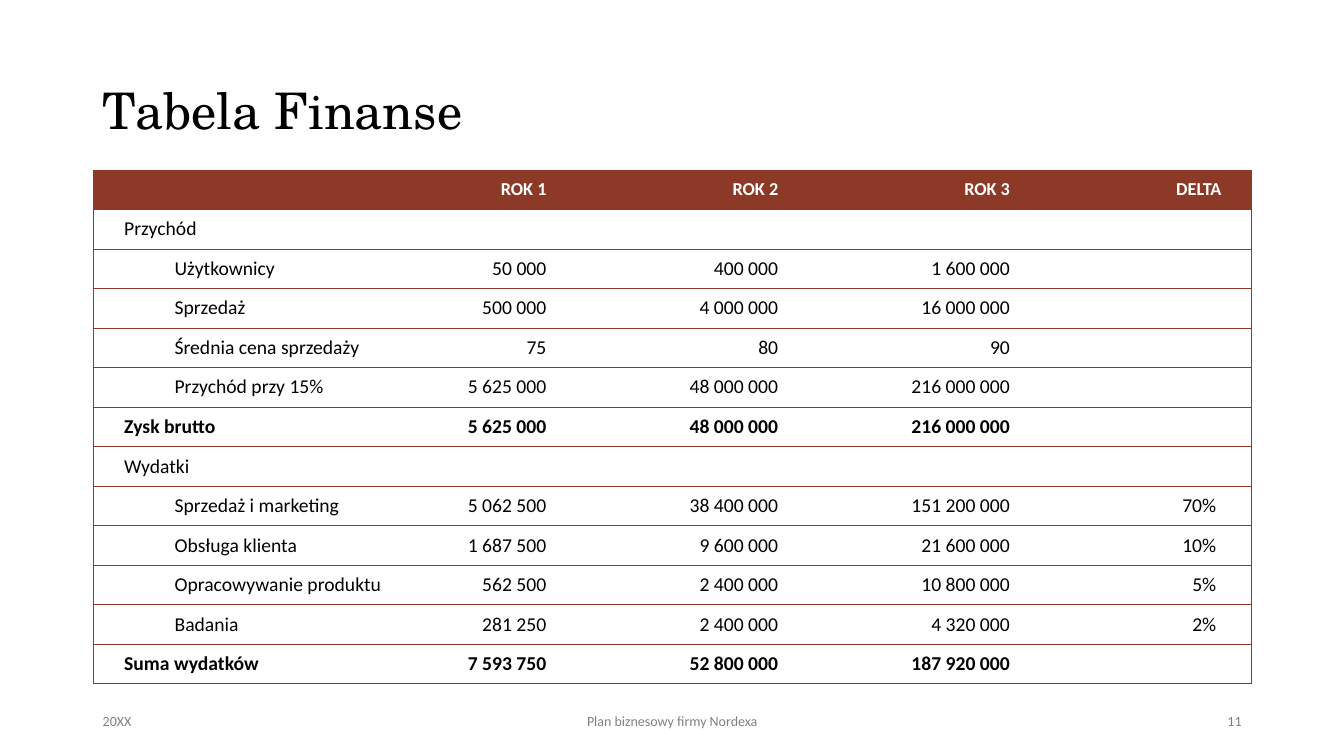
from dataclasses import dataclass

from lxml.etree import SubElement as Sub
from pptx import Presentation
from pptx.dml.color import RGBColor as Rgb
from pptx.enum.text import MSO_ANCHOR as Anchor, MSO_AUTO_SIZE as Auto, PP_ALIGN as Align
from pptx.oxml.ns import qn
from pptx.util import Cm, Pt


@dataclass(frozen=True)
class Theme:
    rust: str = "8C3A27"
    white: str = "FFFFFF"
    black: str = "000000"
    gray: str = "808080"
    serif: str = "TeX Gyre Schola"
    sans: str = "Calibri"
    title: int = 36
    head: int = 13
    body: int = 14
    foot: int = 10
    rule: float = 0.5


LOOK = Theme()
HEADS = ["", "ROK 1", "ROK 2", "ROK 3", "DELTA"]
GROUP, ITEM, TOTAL = range(3)
ROWS = [
    (GROUP, "Przychód", [], ""),
    (ITEM, "Użytkownicy", [50000, 400000, 1600000], ""),
    (ITEM, "Sprzedaż", [500000, 4000000, 16000000], ""),
    (ITEM, "Średnia cena sprzedaży", [75, 80, 90], ""),
    (ITEM, "Przychód przy 15%", [5625000, 48000000, 216000000], ""),
    (TOTAL, "Zysk brutto", [5625000, 48000000, 216000000], ""),
    (GROUP, "Wydatki", [], ""),
    (ITEM, "Sprzedaż i marketing", [5062500, 38400000, 151200000], "70%"),
    (ITEM, "Obsługa klienta", [1687500, 9600000, 21600000], "10%"),
    (ITEM, "Opracowywanie produktu", [562500, 2400000, 10800000], "5%"),
    (ITEM, "Badania", [281250, 2400000, 4320000], "2%"),
    (TOTAL, "Suma wydatków", [7593750, 52800000, 187920000], ""),
]
WIDTHS = [7.59, 4.09, 5.84, 5.84, 5.84]


def apply(thing, **values):
    for name, value in values.items():
        setattr(thing, name, value)


def write(frame, text, size, color, face=LOOK.sans, bold=False, align=Align.LEFT):
    para = frame.paragraphs[0]
    para.alignment = align
    if text:
        run = para.add_run()
        run.text = text
        apply(run.font, name=face, size=Pt(size), bold=bold)
        run.font.color.rgb = Rgb.from_string(color)
    return para


def edge(cell, first, last):
    props = cell._tc.get_or_add_tcPr()
    shown = {"lnL": first, "lnR": last, "lnT": True, "lnB": True}
    for spot, (tag, drawn) in enumerate(shown.items()):
        line = Sub(props, qn(f"a:{tag}"), w=str(Pt(LOOK.rule)))
        if drawn:
            Sub(Sub(line, qn("a:solidFill")), qn("a:srgbClr"), val=LOOK.rust)
        else:
            Sub(line, qn("a:noFill"))
        props.insert(spot, line)


def title(slide, left, top, width, height):
    shape = slide.shapes.title
    apply(shape, left=Cm(left), top=Cm(top), width=Cm(width), height=Cm(height))
    frame = shape.text_frame
    apply(frame, word_wrap=True, auto_size=Auto.NONE, vertical_anchor=Anchor.MIDDLE)
    para = write(frame, "Tabela Finanse", LOOK.title, LOOK.black, LOOK.serif)
    para.line_spacing = 0.9


def fill(cell, text, col, kind, head):
    cell.fill.solid()
    cell.fill.fore_color.rgb = Rgb.from_string(LOOK.rust if head else LOOK.white)
    last = col == len(WIDTHS) - 1
    inset = (0.76 if head else 0.89) if last else 0.25
    apply(cell, vertical_anchor=Anchor.MIDDLE, margin_top=0, margin_bottom=0,
          margin_left=Cm(0.25 if col else 0.79), margin_right=Cm(inset))
    para = write(cell.text_frame, text,
                 LOOK.head if head else LOOK.body,
                 LOOK.white if head else LOOK.black,
                 bold=head or kind == TOTAL,
                 align=Align.RIGHT if col else Align.LEFT)
    if kind == ITEM and col == 0:
        para.level = 1
        apply_indent = para._p.get_or_add_pPr()
        apply_indent.set("marL", str(Cm(1.27)))
        apply_indent.set("indent", "0")
    edge(cell, col == 0, last)


def finance(slide, left, top, width, height):
    lines = [(GROUP, HEADS)]
    for kind, label, years, delta in ROWS:
        shown = [f"{year:,}".replace(",", " ") for year in years] or [""] * 3
        lines.append((kind, [label, *shown, delta]))
    grid = slide.shapes.add_table(len(lines), len(WIDTHS), Cm(left), Cm(top),
                                  Cm(width), Cm(height)).table
    grid.horz_banding = False
    for col, size in zip(grid.columns, WIDTHS):
        col.width = Cm(size)
    for row, (kind, texts) in enumerate(lines):
        grid.rows[row].height = Cm(height / len(lines))
        for col, text in enumerate(texts):
            fill(grid.cell(row, col), text, col, kind, row == 0)


def footer(slide, left, top, width, height):
    side, mid = 7.62, 11.43
    parts = [
        ("20XX", 0, side, Align.LEFT),
        ("Plan biznesowy firmy Nordexa", (width - mid) / 2, mid, Align.CENTER),
        ("11", width - side, side, Align.RIGHT),
    ]
    for text, shift, span, align in parts:
        box = slide.shapes.add_textbox(Cm(left + shift), Cm(top), Cm(span), Cm(height))
        apply(box.text_frame, word_wrap=True, vertical_anchor=Anchor.MIDDLE)
        write(box.text_frame, text, LOOK.foot, LOOK.gray, align=align)


def main():
    deck = Presentation()
    apply(deck, slide_width=Cm(33.87), slide_height=Cm(19.05))
    slide = deck.slides.add_slide(deck.slide_layouts[5])
    left, width = 2.34, 29.2
    title(slide, left, 1.96, width, 1.78)
    finance(slide, left, 4.28, width, 12.96)
    footer(slide, left, 17.65, width, 1.02)
    deck.save("out.pptx")


if __name__ == "__main__":
    main()
